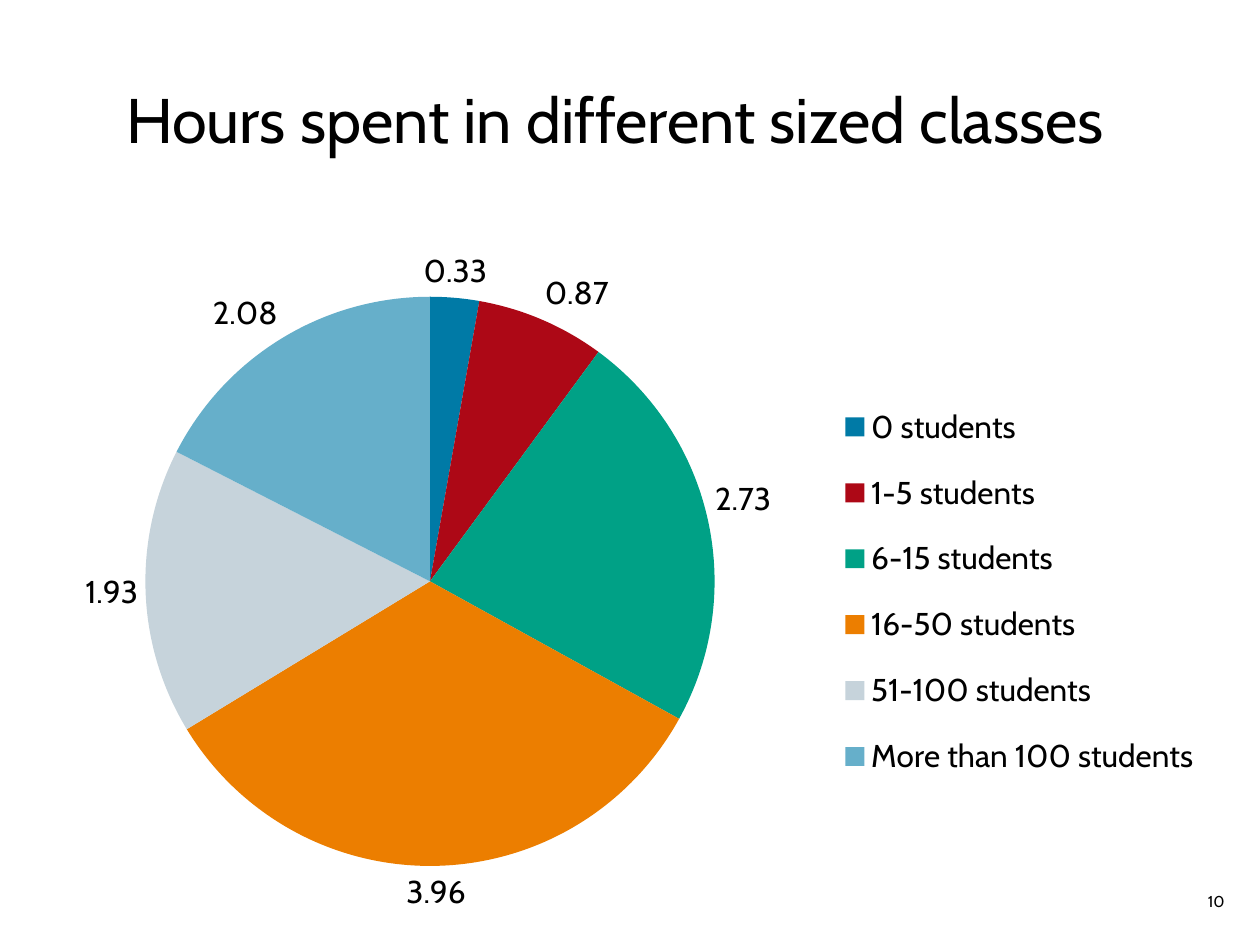
import pptx
import pptx.chart.data
import pptx.dml.color
import pptx.enum.chart
import pptx.enum.text
import pptx.oxml
import pptx.oxml.ns
import pptx.util
from dataclasses import dataclass

Pt = pptx.util.Pt
RGB = pptx.dml.color.RGBColor.from_string
qn = pptx.oxml.ns.qn
PP_ALIGN = pptx.enum.text.PP_ALIGN
MSO_ANCHOR = pptx.enum.text.MSO_ANCHOR


@dataclass(frozen=True)
class Theme:
    font: str = "Cabin"
    text: str = "000000"
    title_size: int = 36
    chart_size: int = 18
    number_size: int = 9
    slices: tuple = ("007AA6", "AD0816", "00A186", "EC7E00", "C6D3DB", "66AFCA")


THEME = Theme()
CLASS_HOURS = {
    "0 students": 0.33,
    "1-5 students": 0.87,
    "6-15 students": 2.73,
    "16-50 students": 3.96,
    "51-100 students": 1.93,
    "More than 100 students": 2.08,
}


def set_attrs(obj, values):
    for name, value in values.items():
        setattr(obj, name, value)


def style_font(font, size):
    set_attrs(font, {"name": THEME.font, "size": Pt(size), "bold": False})
    font.color.rgb = RGB(THEME.text)


def place(sp, left, top, width, height):
    set_attrs(sp, {"left": Pt(left), "top": Pt(top), "width": Pt(width), "height": Pt(height)})


def write_text(sp, text, size, align, frame_format):
    tf = sp.text_frame
    set_attrs(tf, {"word_wrap": True, "auto_size": pptx.enum.text.MSO_AUTO_SIZE.NONE, **frame_format})
    p = tf.paragraphs[0]
    p.alignment = align
    r = p.add_run()
    r.text = text
    style_font(r.font, size)


def add_title(s, text):
    sp = s.shapes.title
    place(sp, 64.8, 37.4, 646.6, 55.4)
    write_text(sp, text, THEME.title_size, PP_ALIGN.LEFT, {"vertical_anchor": MSO_ANCHOR.BOTTOM})


def add_slide_number(s, text):
    sp = s.shapes.add_textbox(Pt(666), Pt(500.4), Pt(33.8), Pt(28.8))
    write_text(sp, text, THEME.number_size, PP_ALIGN.RIGHT,
               {"vertical_anchor": MSO_ANCHOR.MIDDLE, "margin_right": 0})


def set_layout(parent, index, x, y, w, h, inner=False):
    for old in parent.findall(qn("c:layout")):
        parent.remove(old)
    values = {"layoutTarget": "inner"} if inner else {}
    values.update(xMode="edge", yMode="edge", x=x, y=y, w=w, h=h)
    tags = "".join(f'<c:{tag} val="{val}"/>' for tag, val in values.items())
    ns = pptx.oxml.ns.nsdecls("c")
    layout = pptx.oxml.parse_xml(f"<c:layout {ns}><c:manualLayout>{tags}</c:manualLayout></c:layout>")
    parent.insert(index, layout)


def add_pie(s, hours):
    data = pptx.chart.data.CategoryChartData(number_format="0.00")
    data.categories = list(hours)
    data.add_series("Series 1", list(hours.values()))
    chart = s.shapes.add_chart(pptx.enum.chart.XL_CHART_TYPE.PIE,
                               Pt(14.4), Pt(133.9), Pt(680.4), Pt(396.7), data).chart
    set_attrs(chart, {"has_title": False, "has_legend": True})
    style_font(chart.font, THEME.chart_size)

    plot = chart.plots[0]
    set_attrs(plot, {"vary_by_categories": True, "has_data_labels": True})
    for i, color in enumerate(THEME.slices):
        fill = plot.series[0].points[i].format.fill
        fill.solid()
        fill.fore_color.rgb = RGB(color)
    labels = plot.data_labels
    set_attrs(labels, {
        "show_value": True, "show_percentage": False,
        "number_format": "0.00", "number_format_is_linked": False,
        "position": pptx.enum.chart.XL_LABEL_POSITION.OUTSIDE_END,
    })
    style_font(labels.font, THEME.chart_size)

    legend = chart.legend
    set_attrs(legend, {"position": pptx.enum.chart.XL_LEGEND_POSITION.RIGHT, "include_in_layout": False})
    style_font(legend.font, THEME.chart_size)
    set_layout(plot._element.getparent(), 0, 0.1, 0.09, 0.48, 0.82, inner=True)
    set_layout(legend._element, 1, 0.68, 0.21, 0.31, 0.61)


def main():
    prs = pptx.Presentation()
    set_attrs(prs, {"slide_width": Pt(720), "slide_height": Pt(540)})
    s = prs.slides.add_slide(prs.slide_layouts[5])
    add_slide_number(s, "10")
    add_title(s, "Hours spent in different sized classes")
    add_pie(s, CLASS_HOURS)
    prs.save("out.pptx")


if __name__ == "__main__":
    main()
